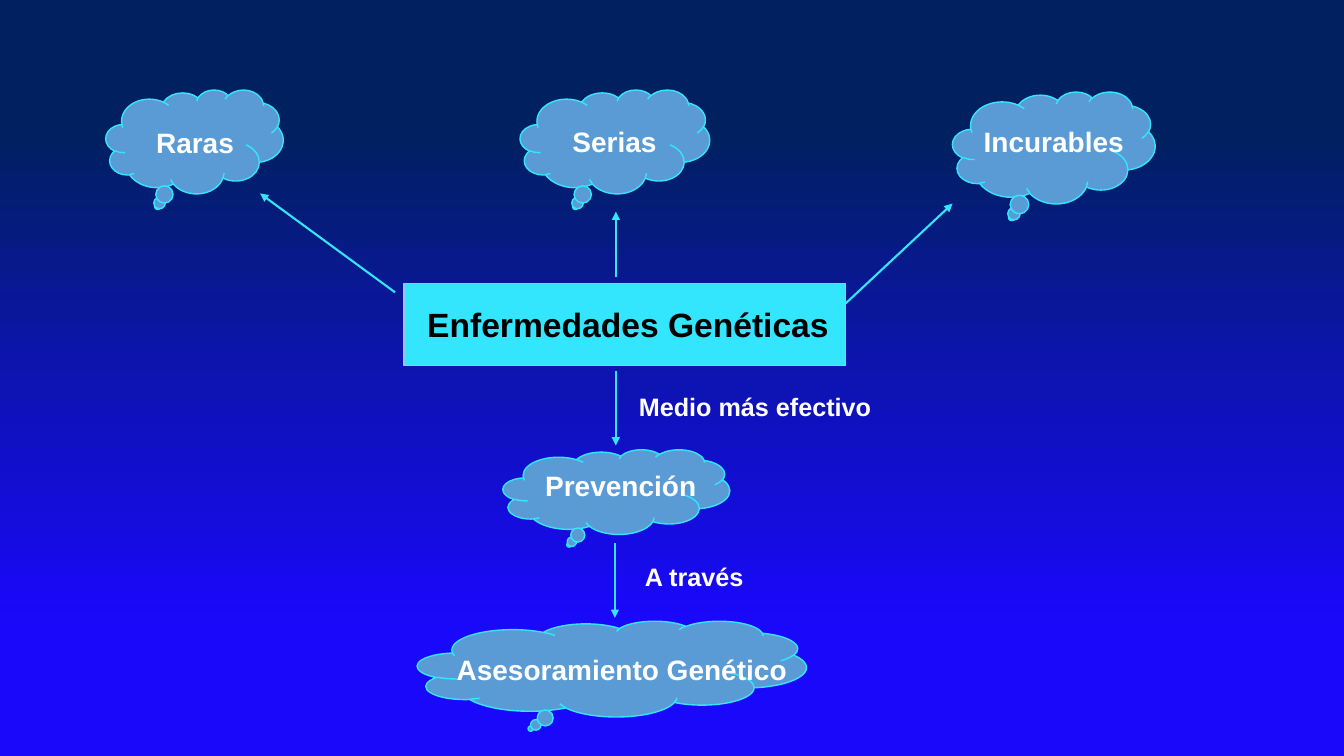
from lxml.etree import SubElement
from pptx import Presentation
from pptx.dml.color import RGBColor
from pptx.enum.shapes import MSO_CONNECTOR, MSO_SHAPE
from pptx.oxml.ns import qn
from pptx.util import Pt

CYAN, BLUE, WHITE, BLACK = "33E5FD", "5B9BD5", "FFFFFF", "000000"
GRADIENT = [(18, "002060"), (48, "0D14AD"), (82, "1908FA")]

# Boxes are left, top, width, height; labels are left, top, width.
TOPIC_BOX = (288.7, 202.3, 315.4, 59)
TOPIC_LABEL = ("Enfermedades Genéticas", (298.1, 213.8, 342.7), 24, BLACK)
CLOUDS = [
    ("Raras", (75.6, 64.1, 126.7, 74.2), (104.4, 86.4, 81.4)),
    ("Serias", (371.5, 64.1, 135.4, 74.2), (401.8, 85.7, 79.9)),
    ("Incurables", (680.4, 65.5, 144.7, 79.9), (695.5, 85.7, 142.6)),
    ("Prevención", (359.3, 321.1, 162, 60.5), (382.3, 331.2, 142.6)),
    ("Asesoramiento Genético", (298.1, 443.5, 277.9, 68.4), (319, 462.2, 255.6)),
]
NOTES = [
    ("Medio más efectivo", (449.3, 275.8, 191.5)),
    ("A través", (453.6, 397.4, 191.5)),
]
ARROWS = [
    (282.2, 208.8, 185.8, 138.2),
    (439.9, 198, 439.9, 151.2),
    (604.1, 216.7, 680.4, 145.4),
    (439.9, 265, 439.9, 318.2),
    (439.2, 388.1, 439.2, 441.4),
]


def points(values):
    return [Pt(value) for value in values]


def color(hex_code):
    return RGBColor.from_string(hex_code)


def paint_background(page):
    fill = page.background.fill
    fill.gradient()
    fill.gradient_angle = 270
    stops = next(page.element.iter(qn("a:gsLst")))
    stops.clear()
    for percent, hex_code in GRADIENT:
        stop = SubElement(stops, qn("a:gs"), pos=str(percent * 1000))
        SubElement(stop, qn("a:srgbClr"), val=hex_code)


def add_figure(page, kind, box, fill, outline):
    figure = page.shapes.add_shape(kind, *points(box))
    figure.shadow.inherit = False
    figure.fill.solid()
    figure.fill.fore_color.rgb = color(fill)
    figure.line.color.rgb = color(outline)
    figure.line.width = Pt(1)


def add_label(page, text, place, size, hex_code):
    # One line of text plus the top and bottom insets
    box = page.shapes.add_textbox(*points((*place, size * 1.2 + 7.2)))
    box.text_frame.word_wrap = True
    para = box.text_frame.paragraphs[0]
    para.text = text
    para.font.name = "Arial"
    para.font.size = Pt(size)
    para.font.bold = True
    para.font.color.rgb = color(hex_code)


def add_arrow(page, ends):
    arrow = page.shapes.add_connector(MSO_CONNECTOR.STRAIGHT, *points(ends))
    arrow.line.color.rgb = color(CYAN)
    arrow.line.width = Pt(1.5)
    properties = arrow.element.spPr
    SubElement(properties.find(qn("a:ln")), qn("a:tailEnd"), type="triangle")
    SubElement(properties, qn("a:effectLst"))


def main():
    deck = Presentation()
    deck.slide_width, deck.slide_height = Pt(960), Pt(540)
    page = deck.slides.add_slide(deck.slide_layouts[6])
    paint_background(page)

    add_figure(page, MSO_SHAPE.RECTANGLE, TOPIC_BOX, CYAN, "9DC3E6")
    add_label(page, *TOPIC_LABEL)
    for text, box, place in CLOUDS:
        add_figure(page, MSO_SHAPE.CLOUD_CALLOUT, box, BLUE, CYAN)
        add_label(page, text, place, 20, WHITE)
    for text, place in NOTES:
        add_label(page, text, place, 18, WHITE)
    for ends in ARROWS:
        add_arrow(page, ends)

    deck.save("out.pptx")


if __name__ == "__main__":
    main()
